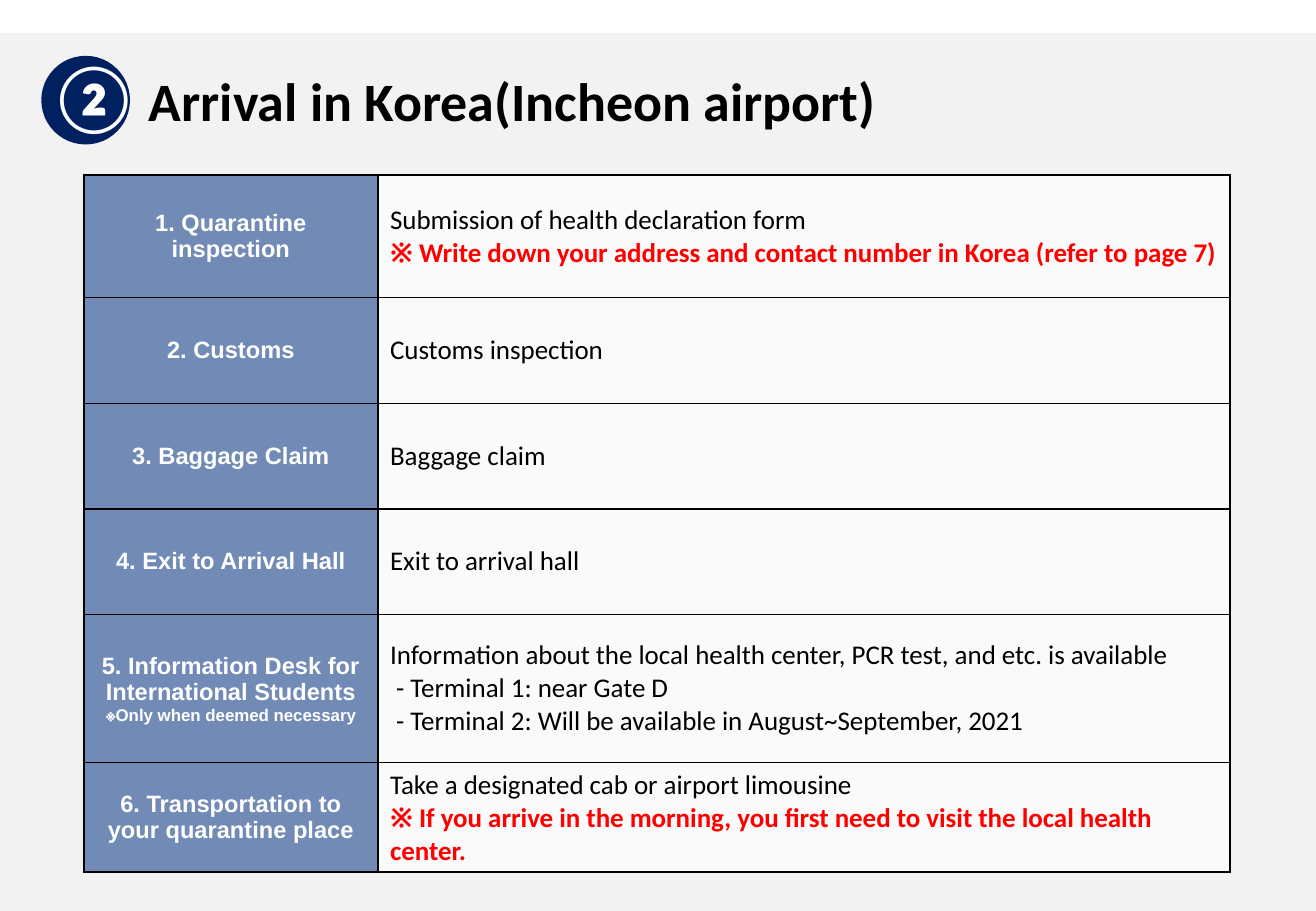
from dataclasses import dataclass

from lxml import etree
from pptx import Presentation
from pptx import util as u
from pptx.dml.color import RGBColor
from pptx.enum import shapes, text
from pptx.oxml import ns

COLORS = {
    "band": "F2F2F2",
    "navy": "002060",
    "label": "2F5597",
    "white": "FFFFFF",
    "black": "000000",
    "alert": "FF0000",
}
SLIDE_WIDTH, SLIDE_HEIGHT = u.Inches(10.83), u.Inches(7.5)
CELL_OPACITY = 66
COLUMN_SHARES = (22.35, 64.73)


@dataclass(frozen=True)
class Line:
    wording: str
    size: float
    font: str = "Calibri"
    color: str = "black"
    bold: bool = False
    align: text.PP_ALIGN = text.PP_ALIGN.LEFT
    indent: float = 0


@dataclass(frozen=True)
class Step:
    height: float
    label: tuple[Line, ...]
    details: tuple[Line, ...]


def label(wording: str, size: float = 14) -> Line:
    return Line(wording, size, "Arial", "white", True, text.PP_ALIGN.CENTER)


def detail(wording: str, indent: float = 0) -> Line:
    return Line(wording, 16, indent=indent)


def alert(wording: str) -> Line:
    return Line(wording, 16, color="alert", bold=True)


STEPS = (
    Step(13.47, (label("1. Quarantine inspection"),), (
        detail("Submission of health declaration form"),
        alert("※ Write down your address and contact number in Korea (refer to page 7)"),
    )),
    Step(11.6, (label("2. Customs"),), (detail("Customs inspection"),)),
    Step(11.6, (label("3. Baggage Claim"),), (detail("Baggage claim"),)),
    Step(11.6, (label("4. Exit to Arrival Hall"),), (detail("Exit to arrival hall"),)),
    Step(16.27, (
        label("5. Information Desk for International Students"),
        label("※Only when deemed necessary", 10),
    ), (
        detail("Information about the local health center, PCR test, and etc. is available"),
        detail("- Terminal 1: near Gate D", 0.05),
        detail("- Terminal 2: Will be available in August~September, 2021", 0.05),
    )),
    Step(11.6, (label("6. Transportation to your quarantine place"),), (
        detail("Take a designated cab or airport limousine"),
        alert("※ If you arrive in the morning, you first need to visit the local health center."),
    )),
)


def across(percent: float) -> int:
    return round(SLIDE_WIDTH * percent / 100)


def down(percent: float) -> int:
    return round(SLIDE_HEIGHT * percent / 100)


def place(left: float, top: float, width: float, height: float) -> tuple[int, int, int, int]:
    return across(left), down(top), across(width), down(height)


def rgb(name: str) -> RGBColor:
    return RGBColor.from_string(COLORS[name])


def write(frame, lines: tuple[Line, ...]) -> None:
    frame.text = "\n".join(line.wording for line in lines)
    for paragraph, line in zip(frame.paragraphs, lines):
        paragraph.alignment = line.align
        if line.indent:
            paragraph._p.get_or_add_pPr().set("marL", str(u.Inches(line.indent)))
        for run in paragraph.runs:
            run.font.name = line.font
            run.font.size = u.Pt(line.size)
            run.font.bold = line.bold
            run.font.color.rgb = rgb(line.color)


def fit_to_text(frame) -> None:
    frame.word_wrap = False
    frame.auto_size = text.MSO_AUTO_SIZE.SHAPE_TO_FIT_TEXT


def draw_plain(owner, kind: shapes.MSO_SHAPE, box: tuple[int, int, int, int], color: str):
    plain = owner.add_shape(kind, *box)
    plain.shadow.inherit = False
    plain.fill.solid()
    plain.fill.fore_color.rgb = rgb(color)
    plain.line.fill.background()
    return plain


def draw_badge(slide) -> None:
    badge = slide.shapes.add_group_shape().shapes
    draw_plain(badge, shapes.MSO_SHAPE.OVAL, place(3.14, 6.13, 6.74, 9.73), "navy")
    number = badge.add_textbox(*place(2.86, 5.33, 7.02, 10.27)).text_frame
    fit_to_text(number)
    write(number, (Line("②", 40, color="white", bold=True),))


def draw_heading(slide) -> None:
    heading = slide.shapes.title
    heading.left, heading.top, heading.width, heading.height = place(10.16, 6.67, 57.62, 8.53)
    fit_to_text(heading.text_frame)
    heading.text_frame.vertical_anchor = text.MSO_ANCHOR.MIDDLE
    write(heading.text_frame, (
        Line("Arrival in Korea(Incheon airport)", 32, bold=True, align=text.PP_ALIGN.CENTER),
    ))


def draw_cell(cell, lines: tuple[Line, ...], color: str) -> None:
    properties = cell._tc.get_or_add_tcPr()
    for side in ("a:lnL", "a:lnR", "a:lnT", "a:lnB"):
        border = etree.SubElement(properties, ns.qn(side), w=str(u.Pt(1)))
        paint = etree.SubElement(border, ns.qn("a:solidFill"))
        etree.SubElement(paint, ns.qn("a:srgbClr"), val=COLORS["black"])
    cell.fill.solid()
    cell.fill.fore_color.rgb = rgb(color)
    tint = properties.find(ns.qn("a:solidFill")).find(ns.qn("a:srgbClr"))
    etree.SubElement(tint, ns.qn("a:alpha"), val=str(CELL_OPACITY * 1000))
    cell.vertical_anchor = text.MSO_ANCHOR.MIDDLE
    write(cell.text_frame, lines)


def draw_steps(slide) -> None:
    box = place(6.37, 19.2, sum(COLUMN_SHARES), sum(step.height for step in STEPS))
    steps = slide.shapes.add_table(len(STEPS), len(COLUMN_SHARES), *box).table
    steps.first_row = False
    steps.horz_banding = False
    for column, share in zip(steps.columns, COLUMN_SHARES):
        column.width = across(share)
    for row, step in zip(steps.rows, STEPS):
        row.height = down(step.height)
        draw_cell(row.cells[0], step.label, "label")
        draw_cell(row.cells[1], step.details, "white")


def main() -> None:
    deck = Presentation()
    deck.slide_width, deck.slide_height = SLIDE_WIDTH, SLIDE_HEIGHT
    slide = deck.slides.add_slide(deck.slide_layouts.get_by_name("Title Only"))
    band = draw_plain(slide.shapes, shapes.MSO_SHAPE.RECTANGLE, place(0, 3.6, 100, 96.4), "band")
    slide.shapes.title._element.addprevious(band._element)
    draw_badge(slide)
    draw_heading(slide)
    draw_steps(slide)
    deck.save("out.pptx")


if __name__ == "__main__":
    main()
